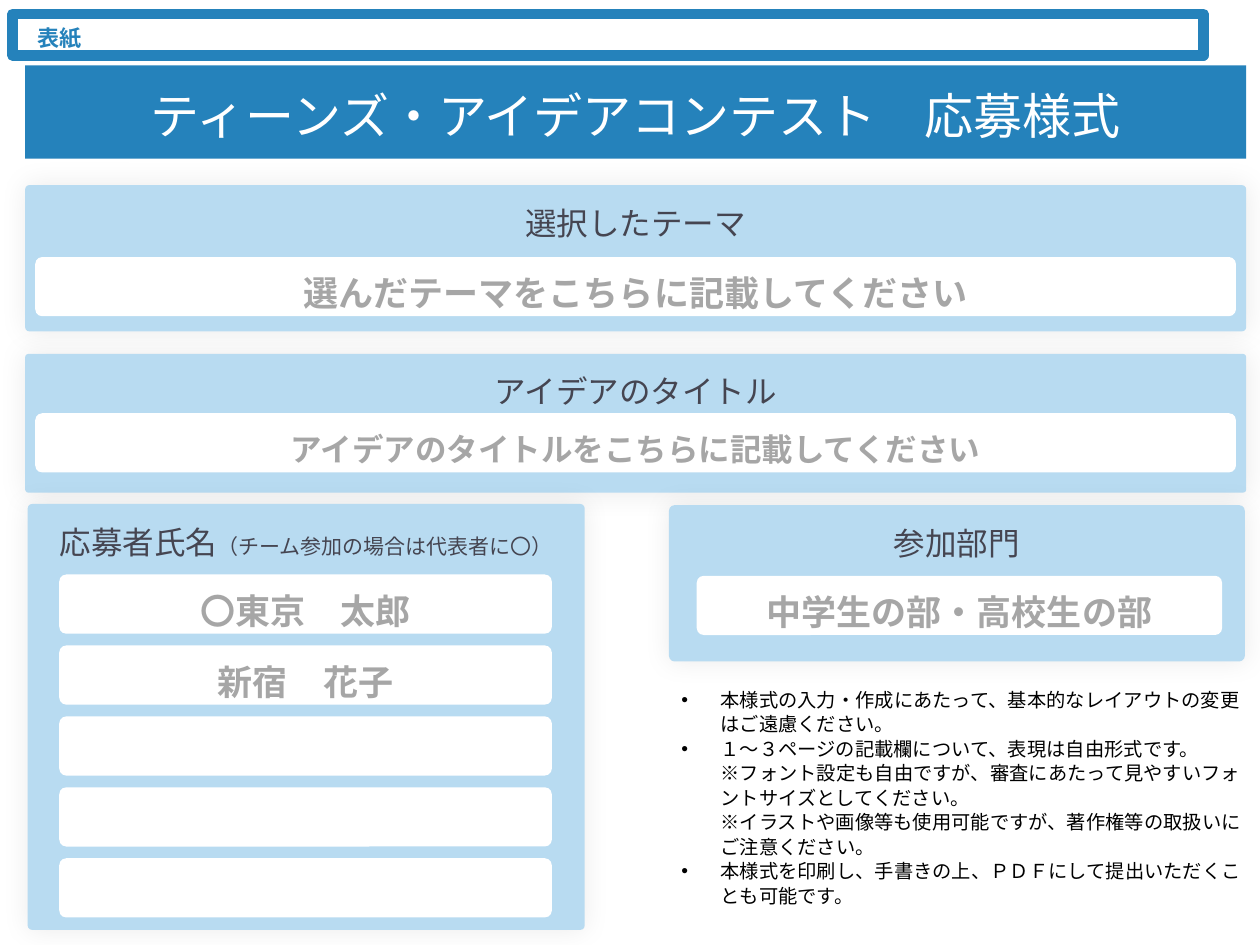
from dataclasses import dataclass

from lxml.etree import SubElement
from pptx import Presentation
from pptx.dml.color import RGBColor
from pptx.enum.shapes import MSO_SHAPE as Shape
from pptx.enum.text import MSO_ANCHOR as Anchor, MSO_AUTO_SIZE as AutoSize, PP_ALIGN as Align
from pptx.oxml.ns import qn
from pptx.util import Inches, Pt


@dataclass(frozen=True)
class Theme:
    blue: str = "2582BB"
    pale: str = "B8DBF1"
    white: str = "FFFFFF"
    ink: str = "454551"
    hint: str = "A6A6A6"
    black: str = "000000"
    japanese: str = "Noto Sans CJK JP"
    latin: str = "Arial"
    label_font: str = "Calibri"
    banner_size: float = 28
    heading_size: float = 18
    remark_size: float = 12
    entry_size: float = 20
    label_size: float = 12.6
    note_size: float = 11


THEME = Theme()
COLUMNS, ROWS = 100, 75
UNIT = Inches(10) // COLUMNS


@dataclass(frozen=True)
class Box:
    left: float
    top: float
    width: float
    height: float

    def inside(self, left, top, width, height):
        return Box(self.left + left, self.top + top, width, height)

    def place(self):
        return [round(value * UNIT) for value in (self.left, self.top, self.width, self.height)]


def style(span, size, color, font=THEME.japanese, bold=False):
    span.font.size = Pt(size)
    span.font.bold = bold
    span.font.name = font
    span.font.color.rgb = RGBColor.from_string(color)
    properties = span.font._element
    properties.set("lang", "ja-JP")
    SubElement(properties, qn("a:ea"), typeface=THEME.japanese)


def set_insets(frame, left, top, right, bottom):
    frame.margin_left, frame.margin_top = round(left * UNIT), round(top * UNIT)
    frame.margin_right, frame.margin_bottom = round(right * UNIT), round(bottom * UNIT)


def space(para, align, lines, after):
    para.alignment = align
    para.line_spacing = lines
    para.space_before = Pt(0)
    para.space_after = Pt(after)


def add_block(page, box, fill, kind=Shape.ROUNDED_RECTANGLE, corner=None):
    block = page.shapes.add_shape(kind, *box.place())
    block.shadow.inherit = False
    block.fill.solid()
    block.fill.fore_color.rgb = RGBColor.from_string(fill)
    block.line.fill.background()
    if corner is not None:
        block.adjustments[0] = corner
    block.text_frame.word_wrap = True
    return block


def add_glow(block):
    effects = block._element.spPr.find(qn("a:effectLst"))
    shadow = SubElement(effects, qn("a:outerShdw"), blurRad=str(Pt(15)), dist="0", dir="0",
                        algn="ctr", rotWithShape="0")
    color = SubElement(shadow, qn("a:srgbClr"), val=THEME.black)
    SubElement(color, qn("a:alpha"), val="8000")


def add_label(page, box, text):
    label = page.shapes.title
    label.left, label.top, label.width, label.height = box.place()
    label.line.width = Pt(6)
    label.line.color.rgb = RGBColor.from_string(THEME.blue)
    SubElement(label.line._get_or_add_ln(), qn("a:round"))
    frame = label.text_frame
    frame.text = text
    frame.auto_size = AutoSize.NONE
    frame.vertical_anchor = Anchor.MIDDLE
    set_insets(frame, 2, 0.5, 1, 0.5)
    space(frame.paragraphs[0], Align.LEFT, 1.2, 3)
    style(frame.paragraphs[0].runs[0], THEME.label_size, THEME.blue, THEME.label_font, True)


def add_banner(page, box, text):
    frame = add_block(page, box, THEME.blue, Shape.RECTANGLE).text_frame
    frame.text = text
    frame.vertical_anchor = Anchor.TOP
    set_insets(frame, 3.9, 1.6, 3.9, 0)
    frame.paragraphs[0].alignment = Align.CENTER
    style(frame.paragraphs[0].runs[0], THEME.banner_size, THEME.white)


def add_entry(page, box, text, size):
    frame = add_block(page, box, THEME.white, corner=0.119).text_frame
    frame.vertical_anchor = Anchor.MIDDLE
    if text:
        frame.text = text
        space(frame.paragraphs[0], Align.CENTER, 1.3, 6)
        style(frame.paragraphs[0].runs[0], size, THEME.hint, THEME.latin, True)


def add_panel(page, box, corner, heading, first_entry, entries,
              remark="", entry_size=THEME.entry_size, pitch=0.0):
    panel = add_block(page, box, THEME.pale, corner=corner)
    add_glow(panel)
    frame = panel.text_frame
    frame.text = heading
    frame.vertical_anchor = Anchor.TOP
    para = frame.paragraphs[0]
    space(para, Align.CENTER, 1.3, 6)
    style(para.runs[0], THEME.heading_size, THEME.ink)
    if remark:
        span = para.add_run()
        span.text = remark
        style(span, THEME.remark_size, THEME.ink)
    left, top, width, height = first_entry
    for row, text in enumerate(entries):
        add_entry(page, box.inside(left, top + row * pitch, width, height), text, entry_size)


def add_notes(page, box, notes):
    frame = page.shapes.add_textbox(*box.place()).text_frame
    frame.word_wrap = True
    for index, (text, bulleted) in enumerate(notes):
        para = frame.paragraphs[0] if index == 0 else frame.add_paragraph()
        para.text = text
        space(para, Align.LEFT, Pt(14), 0)
        properties = para._p.get_or_add_pPr()
        indent = round(3.1 * UNIT)
        properties.set("marL", str(indent))
        properties.set("indent", str(-indent if bulleted else 0))
        if bulleted:
            SubElement(properties, qn("a:buFont"), typeface=THEME.latin)
            SubElement(properties, qn("a:buChar"), char="•")
        style(para.runs[0], THEME.note_size, THEME.black)


def main():
    deck = Presentation()
    deck.slide_width, deck.slide_height = COLUMNS * UNIT, ROWS * UNIT
    page = deck.slides.add_slide(deck.slide_layouts[5])
    add_label(page, Box(1, 1.1, 94.5, 3.3), "表紙")
    add_banner(page, Box(2, 5.2, 96.9, 7.4), "ティーンズ・アイデアコンテスト　応募様式")
    add_panel(page, Box(2, 14.7, 96.9, 11.6), 0.027, "選択したテーマ",
              (0.8, 5.7, 95.3, 4.7), ["選んだテーマをこちらに記載してください"])
    add_panel(page, Box(2, 28.1, 96.9, 11), 0.022, "アイデアのタイトル",
              (0.8, 4.7, 95.3, 4.7), ["アイデアのタイトルをこちらに記載してください"],
              entry_size=THEME.heading_size)
    add_panel(page, Box(2.2, 40, 44.2, 33.8), 0.01, "応募者氏名",
              (2.5, 5.6, 39.1, 4.7), ["〇東京　太郎", "新宿　花子", "", "", ""],
              remark="（チーム参加の場合は代表者に〇）", pitch=5.63)
    add_panel(page, Box(53.1, 40.1, 45.7, 12.4), 0.035, "参加部門",
              (2.2, 5.6, 41.7, 4.7), ["中学生の部・高校生の部"])
    add_notes(page, Box(53.1, 54, 47.2, 18.6), [
        ("本様式の入力・作成にあたって、基本的なレイアウトの変更はご遠慮ください。", True),
        ("１～３ページの記載欄について、表現は自由形式です。", True),
        ("※フォント設定も自由ですが、審査にあたって見やすいフォントサイズとしてください。", False),
        ("※イラストや画像等も使用可能ですが、著作権等の取扱いにご注意ください。", False),
        ("本様式を印刷し、手書きの上、ＰＤＦにして提出いただくことも可能です。", True),
    ])
    deck.save("out.pptx")


if __name__ == "__main__":
    main()
